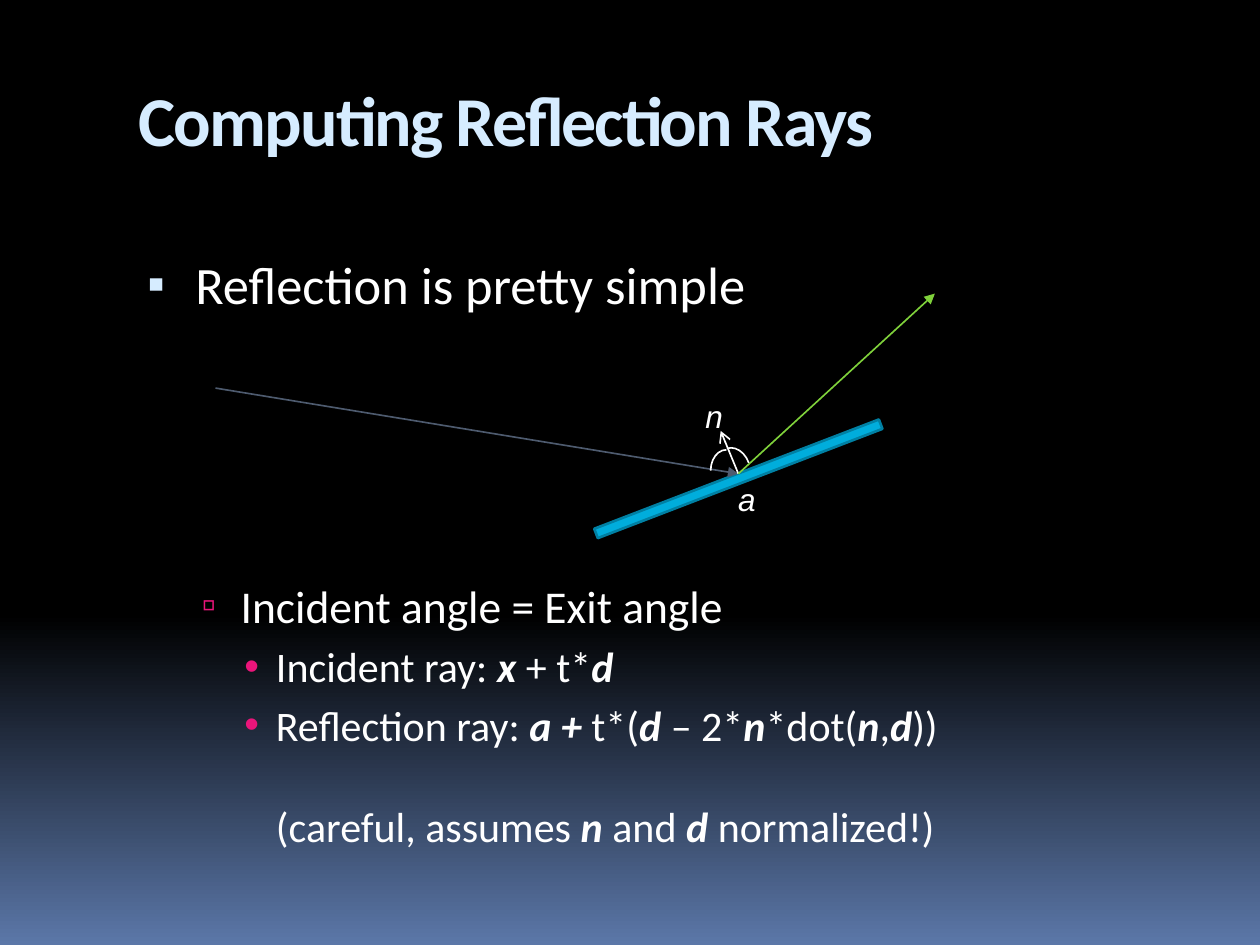
from lxml import etree
from pptx import Presentation
from pptx.dml.color import RGBColor
from pptx.enum.shapes import MSO_CONNECTOR, MSO_SHAPE
from pptx.enum.text import MSO_ANCHOR, MSO_AUTO_SIZE, PP_ALIGN
from pptx.oxml.ns import qn
from pptx.util import Inches, Pt

STRAIGHT = MSO_CONNECTOR.STRAIGHT
RECTANGLE, ARC = MSO_SHAPE.RECTANGLE, MSO_SHAPE.ARC
TOP, LEFT = MSO_ANCHOR.TOP, PP_ALIGN.LEFT
FIXED, GROW = MSO_AUTO_SIZE.NONE, MSO_AUTO_SIZE.SHAPE_TO_FIT_TEXT
TOP_SIDE = 0
WHITE, PALE, PINK = "FFFFFF", "D6ECFF", "EA157A"
color = RGBColor.from_string

deck = Presentation()
deck.slide_width, deck.slide_height = Inches(10), Inches(7.5)
CELL = deck.slide_width // 10  # the slide is a grid of 10 columns by 7.5 rows


def grid(*cells):
    return [round(cell * CELL) for cell in cells]


def write(paragraph, text, size, font="Calibri", fill=WHITE, bold=False, italic=False):
    """Add text to a paragraph; parts between underscores are bold italic."""
    for index, part in enumerate(text.split("_")):
        if not part:
            continue
        strong = index % 2 == 1
        span = paragraph.add_run()
        span.text = part
        span.font.name, span.font.size = font, Pt(size)
        span.font.bold, span.font.italic = bold or strong, italic or strong
        span.font.color.rgb = color(fill)


page = deck.slides.add_slide(deck.slide_layouts[1])
background = page.background.fill
background.gradient()
background.gradient_angle = 270
for stop, (position, shade) in zip(background.gradient_stops, [(0.65, "000000"), (1, "5B77A8")]):
    stop.position, stop.color.rgb = position, color(shade)

# Title and list
title, body = page.shapes.title, page.placeholders[1]
for box, place in [(title, (1, 0.56, 8.5, 1)), (body, (1, 1.95, 8.5, 5))]:
    box.left, box.top, box.width, box.height = grid(*place)
    box.text_frame.auto_size = FIXED
    box.text_frame.vertical_anchor = TOP

heading = title.text_frame.paragraphs[0]
heading.alignment = LEFT
write(heading, "Computing Reflection Rays", 40, fill=PALE, bold=True)
heading.runs[0].font._element.set("spc", "-100")

# level, text, size, space before, left indent, hanging, bullet (sign, colour, percent)
items = [
    (0, "Reflection is pretty simple", 30, 0, 0.45, 0.38, ("▪", PALE, 95)),
    (1, "Incident angle = Exit angle", 26, 150, 0.81, 0.31, ("▫", PINK, 90)),
    (2, "Incident ray: _x_ + t*_d_", 24, 4.8, 1.09, 0.25, ("•", PINK, 100)),
    (2, "Reflection ray: _a + _t*(_d _– 2*_n_*dot(_n_,_d_))", 24, 4.8, 1.09, 0.25, ("•", PINK, 100)),
    (2, "(careful, assumes _n_ and _d_ normalized!)", 24, 29, 1.09, 0, None),
]
for index, (level, text, size, before, indent, hanging, bullet) in enumerate(items):
    paragraph = body.text_frame.add_paragraph() if index else body.text_frame.paragraphs[0]
    paragraph.level = level
    properties = paragraph._p.get_or_add_pPr()
    margin, first_line = grid(indent, -hanging)
    properties.set("marL", str(margin))
    properties.set("indent", str(first_line))
    if bullet:
        sign, shade, percent = bullet
        bullet_color = etree.SubElement(properties, qn("a:buClr"))
        etree.SubElement(bullet_color, qn("a:srgbClr"), val=shade)
        etree.SubElement(properties, qn("a:buSzPct"), val=str(percent * 1000))
        etree.SubElement(properties, qn("a:buChar"), char=sign)
    else:
        etree.SubElement(properties, qn("a:buNone"))
    paragraph.space_before = Pt(before)
    write(paragraph, text, size)

# Mirror, with all rays meeting at the middle of its top side
mirror = page.shapes.add_shape(RECTANGLE, *grid(4.65, 3.76, 2.42, 0.08))
mirror.rotation = 339
mirror.shadow.inherit = False
mirror.fill.solid()
mirror.fill.fore_color.rgb = color("00ADDC")
mirror.line.color.rgb = color("0080A3")
mirror.line.width = Pt(1.5)

hit = (5.84, 3.77)
rays = [
    ((1.71, 3.08), hit, "4E5B6F", "triangle"),
    (hit, (5.72, 3.42), WHITE, "arrow"),
    (hit, (7.42, 2.33), "7FD13B", "triangle"),
]
for start, end, shade, arrowhead in rays:
    ray = page.shapes.add_connector(STRAIGHT, *grid(*start, *end))
    if start == hit:
        ray.begin_connect(mirror, TOP_SIDE)
    else:
        ray.end_connect(mirror, TOP_SIDE)
    ray.line.color.rgb = color(shade)
    ray.line.width = Pt(0.94)
    etree.SubElement(ray.line._get_or_add_ln(), qn("a:tailEnd"), type=arrowhead)
    etree.SubElement(ray._element.spPr, qn("a:effectLst"))

# Equal angles on both sides of the normal
for left, top, rotation, mirrored in [(5.64, 3.57, 0, True), (5.7, 3.55, 340.4, False)]:
    angle = page.shapes.add_shape(ARC, *grid(left, top, 0.25, 0.33))
    angle.rotation = rotation
    if mirrored:
        angle._element.spPr.xfrm.set("flipH", "1")
    angle.shadow.inherit = False
    angle.fill.background()
    angle.line.color.rgb = color(WHITE)
    angle.line.width = Pt(0.94)

for letter, left, top in [("n", 5.5, 3.1), ("a", 5.76, 3.76)]:
    label = page.shapes.add_textbox(*grid(left, top, 0.34, 0.4)).text_frame
    label.word_wrap = False
    label.auto_size = GROW
    write(label.paragraphs[0], letter, 18, font="Arial", italic=True)

deck.save("out.pptx")
